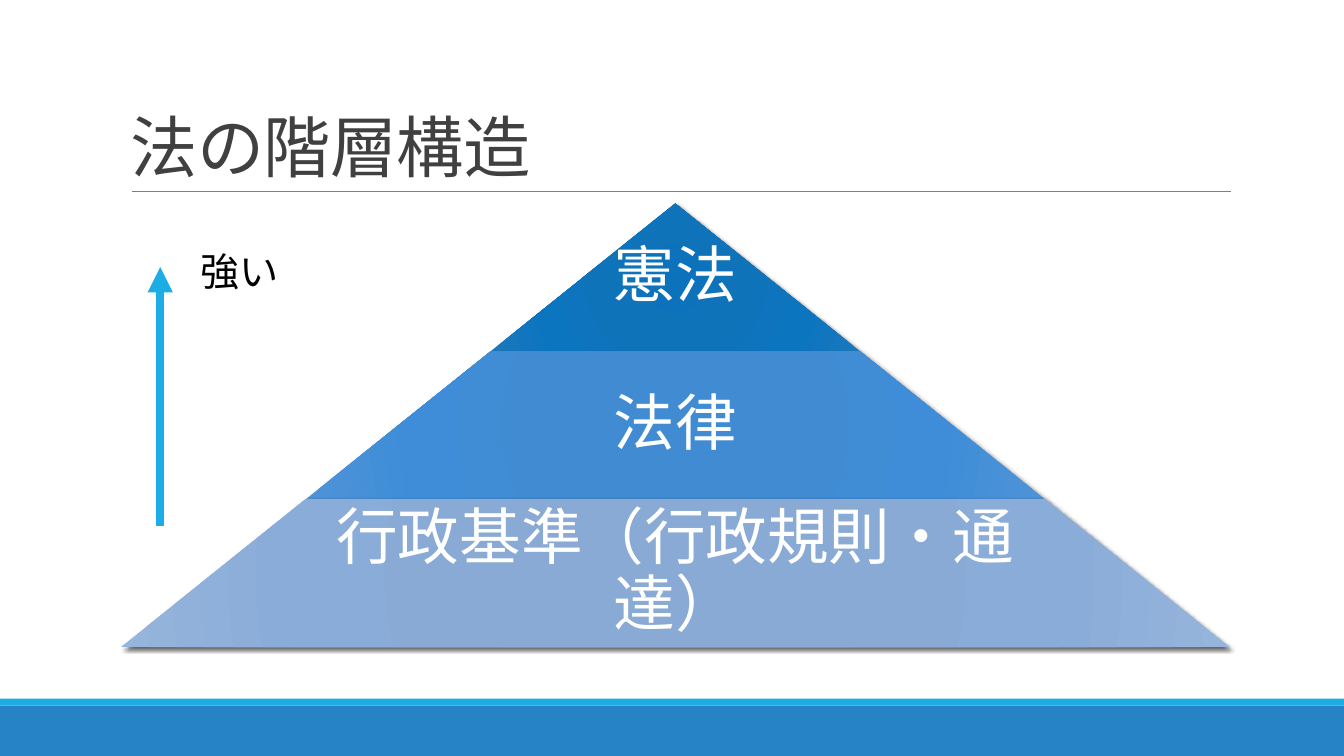
import lxml.etree
import pptx
import pptx.dml.color
import pptx.enum.shapes
import pptx.enum.text
import pptx.oxml
import pptx.oxml.ns
import pptx.util

Pt = pptx.util.Pt
SHAPES = pptx.enum.shapes.MSO_SHAPE
ANCHORS = pptx.enum.text.MSO_ANCHOR
ALIGNMENTS = pptx.enum.text.PP_ALIGN
NAMESPACE = 'xmlns:a="http://schemas.openxmlformats.org/drawingml/2006/main"'

FONT = "Calibri"
GRADIENT_POSITIONS = (0, 34, 70, 100)
TIERS = (
    ("憲法", 1, ("0C72BC", "0F73BA", "0C75C0", "1B78BB")),
    ("法律", 0.65, ("3E8AD3", "418BD2", "3F8DD8", "4E93D6")),
    ("行政基準（行政規則・通達）", 0.65, ("86A8D3", "89AAD4", "8AACD8", "96B5DC")),
)


def color(value):
    """Turn a hex string into a colour."""
    return pptx.dml.color.RGBColor.from_string(value)


def add_text(slide, box, text, size, value, anchor=ANCHORS.TOP,
             alignment=ALIGNMENTS.LEFT, spacing=1, inset=None, tracking=0):
    """Add a one-paragraph text box."""
    frame = slide.shapes.add_textbox(*map(Pt, box)).text_frame
    frame.word_wrap = True
    frame.vertical_anchor = anchor
    if inset is not None:
        frame.margin_left = frame.margin_right = Pt(inset)
        frame.margin_top = frame.margin_bottom = Pt(inset)
    paragraph = frame.paragraphs[0]
    paragraph.alignment = alignment
    paragraph.line_spacing = spacing
    run = paragraph.add_run()
    run.text = text
    run.font.name = FONT
    run.font.size = Pt(size)
    run.font.color.rgb = color(value)
    if tracking:
        run._r.get_or_add_rPr().set("spc", str(int(tracking * 100)))


def add_line(slide, start, end, value, width):
    """Add a straight line without shadow and return its line properties."""
    connector = slide.shapes.add_connector(
        pptx.enum.shapes.MSO_CONNECTOR.STRAIGHT, *map(Pt, start + end))
    connector.line.color.rgb = color(value)
    connector.line.width = Pt(width)
    properties = connector._element.spPr
    lxml.etree.SubElement(properties, pptx.oxml.ns.qn("a:effectLst"))
    return connector.line._get_or_add_ln()


def add_bar(slide, box, value):
    """Add a plain filled rectangle."""
    bar = slide.shapes.add_shape(SHAPES.RECTANGLE, *map(Pt, box))
    bar.shadow.inherit = False
    bar.fill.solid()
    bar.fill.fore_color.rgb = color(value)
    bar.line.fill.background()


def add_footer(slide, box):
    """Draw the footer band with a thin stripe along its top."""
    left, top, width, height = box
    stripe = 5
    add_bar(slide, (left, top + stripe, width, height - stripe), "2683C6")
    add_bar(slide, (left, top, width, stripe), "1CADE4")


def add_title(slide, box):
    """Draw the title and the rule beneath it."""
    left, top, width, height = box
    bottom = top + height
    add_line(slide, (left + 7.9, bottom), (left + width + 0.7, bottom), "808080", 0.5)
    add_text(slide, box, "法の階層構造", 48, "404040", ANCHORS.BOTTOM,
             spacing=0.85, tracking=-0.5)


def style_tier(tier, values):
    """Give a tier its radial gradient and soft shadow."""
    stops = "".join(
        f'<a:gs pos="{position * 1000}"><a:srgbClr val="{value}"/></a:gs>'
        for position, value in zip(GRADIENT_POSITIONS, values))
    gradient = (
        f'<a:gradFill {NAMESPACE} rotWithShape="1"><a:gsLst>{stops}</a:gsLst>'
        '<a:path path="circle"><a:fillToRect l="100000" t="100000" r="100000" b="100000"/>'
        '</a:path></a:gradFill>')
    shadow = (
        f'<a:effectLst {NAMESPACE}><a:outerShdw blurRad="{Pt(3)}" dist="{Pt(2)}" '
        'dir="2700000" rotWithShape="0"><a:srgbClr val="000000">'
        '<a:alpha val="60000"/></a:srgbClr></a:outerShdw></a:effectLst>')
    tier.line.fill.background()
    properties = tier._element.spPr
    properties.find(pptx.oxml.ns.qn("a:prstGeom")).addnext(pptx.oxml.parse_xml(gradient))
    properties.append(pptx.oxml.parse_xml(shadow))


def add_pyramid(slide, box):
    """Stack the tiers into a pyramid that fills the box."""
    left, top, width, height = box
    tier_height = height / len(TIERS)
    step = width / len(TIERS)
    for index, (label, text_share, values) in enumerate(TIERS):
        tier_width = step * (index + 1)
        tier_top = top + tier_height * index
        tier_left = left + (width - tier_width) / 2
        tier = slide.shapes.add_shape(
            SHAPES.TRAPEZOID, *map(Pt, (tier_left, tier_top, tier_width, tier_height)))
        tier.adjustments[0] = step / 2 / tier_height
        style_tier(tier, values)
        text_width = tier_width * text_share
        text_box = (left + (width - text_width) / 2, tier_top, text_width, tier_height)
        add_text(slide, text_box, label, 44, "FFFFFF", ANCHORS.MIDDLE,
                 ALIGNMENTS.CENTER, 0.9, 4.4)


def add_strength_arrow(slide, box):
    """Draw the upward arrow and its label at the top of the box."""
    left, top, width, height = box
    line = add_line(slide, (left, top + height), (left, top + 18), "1CADE4", 6)
    lxml.etree.SubElement(line, pptx.oxml.ns.qn("a:tailEnd"), type="triangle")
    add_text(slide, (left + 21.6, top, width - 21.6, 41), "強い", 28, "000000")


def main():
    """Build and save the slide."""
    presentation = pptx.Presentation()
    presentation.slide_width = Pt(960)
    presentation.slide_height = Pt(540)
    slide = presentation.slides.add_slide(presentation.slide_layouts[6])
    add_footer(slide, (0, 499, 960, 41))
    add_title(slide, (86.4, 22.3, 792, 114.5))
    add_pyramid(slide, (86.4, 145.4, 792, 316.8))
    add_strength_arrow(slide, (114.5, 172.8, 183.6, 203))
    presentation.save("out.pptx")


if __name__ == "__main__":
    main()
